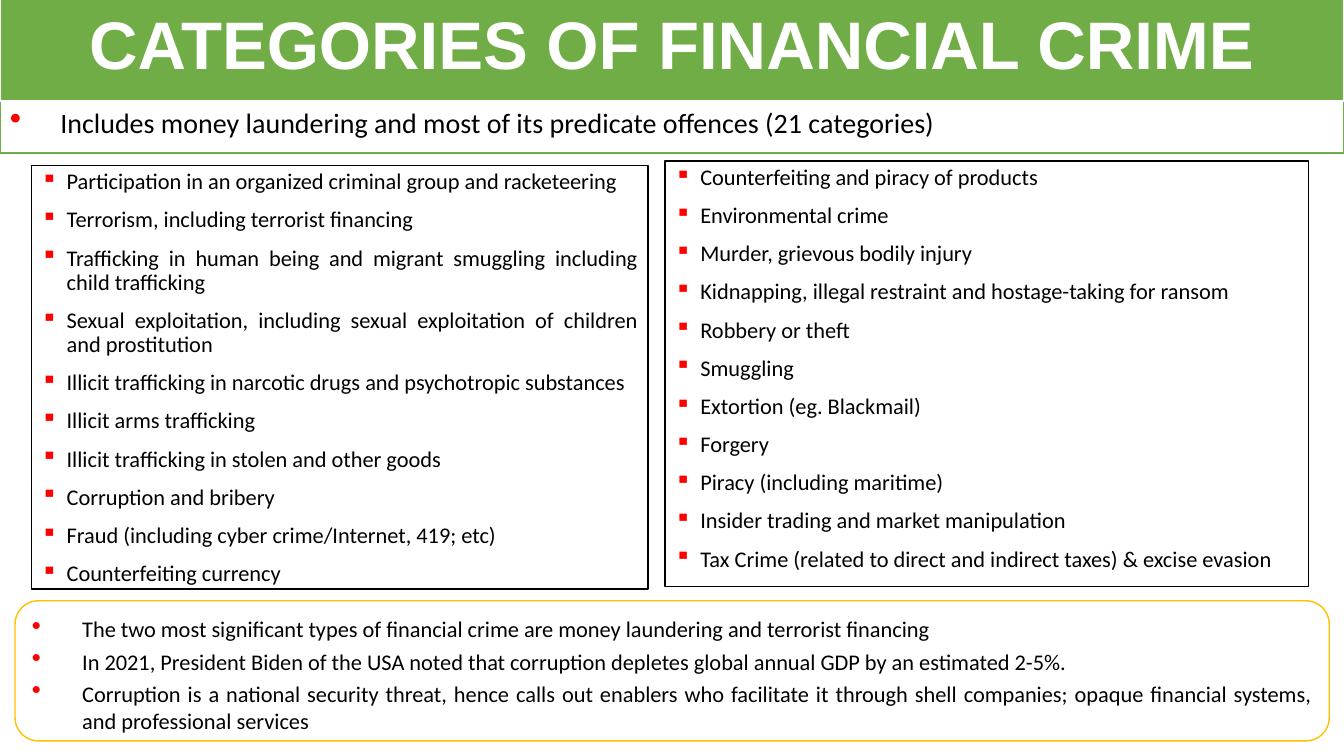
from lxml.etree import SubElement
from pptx import Presentation
from pptx.dml.color import RGBColor
from pptx.enum.shapes import MSO_SHAPE as Shape
from pptx.enum.text import MSO_ANCHOR as Anchor, PP_ALIGN as Align
from pptx.oxml.ns import qn
from pptx.util import Cm, Pt

# Content
TITLE = "CATEGORIES OF FINANCIAL CRIME"
INTRO = ["Includes money laundering and most of its predicate offences (21 categories)"]
LEFT_CRIMES = [
    "Participation in an organized criminal group and racketeering",
    "Terrorism, including terrorist financing",
    "Trafficking in human being and migrant smuggling including child trafficking",
    "Sexual exploitation, including sexual exploitation of children and prostitution",
    "Illicit trafficking in narcotic drugs and psychotropic substances",
    "Illicit arms trafficking",
    "Illicit trafficking in stolen and other goods",
    "Corruption and bribery",
    "Fraud (including cyber crime/Internet, 419; etc)",
    "Counterfeiting currency",
]
RIGHT_CRIMES = [
    "Counterfeiting and piracy of products",
    "Environmental crime",
    "Murder, grievous bodily injury",
    "Kidnapping, illegal restraint and hostage-taking for ransom",
    "Robbery or theft",
    "Smuggling",
    "Extortion (eg. Blackmail)",
    "Forgery",
    "Piracy (including maritime)",
    "Insider trading and market manipulation",
    "Tax Crime (related to direct and indirect taxes) & excise evasion",
]
REMARKS = [
    "The two most significant types of financial crime are money laundering and terrorist financing",
    "In 2021, President Biden of the USA noted that corruption depletes global annual GDP "
    "by an estimated 2-5%.",
    "Corruption is a national security threat, hence calls out enablers who facilitate it "
    "through shell companies; opaque financial systems, and professional services",
]
COLORS = {"green": "70AD47", "white": "FFFFFF", "black": "000000",
          "red": "FF0000", "gold": "FFC000"}
WIDTH, HEIGHT = 33.87, 19.05

# Bullet styles: character, size in percent, indent in cm, space before, line spacing
ROUND = ("•", 120, 1.27, 4, 1.0)
SQUARE = ("▪", 100, 0.64, 10, 0.9)

# Bulleted boxes: shape, (left, top, width, height) in cm, line colour, items, style, size
BOXES = [
    (Shape.RECTANGLE, (0, 2.54, WIDTH, 1.32), "green", INTRO, ROUND, 20),
    (Shape.RECTANGLE, (0.79, 4.17, 15.54, 10.67), "black", LEFT_CRIMES, SQUARE, 16),
    (Shape.RECTANGLE, (16.76, 4.06, 16.21, 10.72), "black", RIGHT_CRIMES, SQUARE, 16),
    (Shape.ROUNDED_RECTANGLE, (0.38, 15.14, 33.12, 3.53), "gold", REMARKS, ROUND, 16),
]


def rgb(name):
    return RGBColor.from_string(COLORS[name])


def add_panel(shape, place, fill, line, weight=1):
    s = slide.shapes.add_shape(shape, *map(Cm, place))
    s.shadow.inherit = False
    s.fill.solid()
    s.fill.fore_color.rgb = rgb(fill)
    s.line.color.rgb = rgb(line)
    s.line.width = Pt(weight)
    return s


def style_font(p, name, size, color, bold=False):
    for r in p.runs:
        r.font.name, r.font.size, r.font.bold = name, Pt(size), bold
        r.font.color.rgb = rgb(color)


def add_bullet(p, char, percent, indent):
    pPr = p._p.get_or_add_pPr()
    pPr.set("marL", str(Cm(indent)))
    pPr.set("indent", str(-Cm(indent)))
    color = SubElement(pPr, qn("a:buClr"))
    SubElement(color, qn("a:srgbClr"), val=COLORS["red"])
    SubElement(pPr, qn("a:buSzPct"), val=str(percent * 1000))
    SubElement(pPr, qn("a:buChar"), char=char)


def fill_list(tf, items, style, size):
    char, percent, indent, before, spacing = style
    tf.word_wrap = True
    tf.vertical_anchor = Anchor.TOP
    tf.text = "\n".join(items)
    for p in tf.paragraphs:
        p.alignment = Align.JUSTIFY
        p.space_before = Pt(before)
        p.line_spacing = spacing
        add_bullet(p, char, percent, indent)
        style_font(p, "Calibri", size, "black")


prs = Presentation()
prs.slide_width, prs.slide_height = Cm(WIDTH), Cm(HEIGHT)
slide = prs.slides.add_slide(prs.slide_layouts[5])

# Lists
for shape, place, line, items, style, size in BOXES:
    s = add_panel(shape, place, "white", line)
    fill_list(s.text_frame, items, style, size)
s.text_frame.margin_top = Cm(0.19)  # remarks sit below the rounded corners

# Banner with the title in front of it
banner = add_panel(Shape.RECTANGLE, (0, -0.43, WIDTH, 2.97), "green", "white", 1.5)
title = slide.shapes.title
banner.element.addnext(title.element)
title.left, title.top, title.width, title.height = map(Cm, (0, -0.23, WIDTH, 2.31))
tf = title.text_frame
tf.text = TITLE
tf.vertical_anchor = Anchor.TOP
tf.margin_top, tf.margin_bottom = Cm(0.28), Cm(0)
tf.paragraphs[0].alignment = Align.CENTER
style_font(tf.paragraphs[0], "Arial", 48, "white", bold=True)

prs.save("out.pptx")
